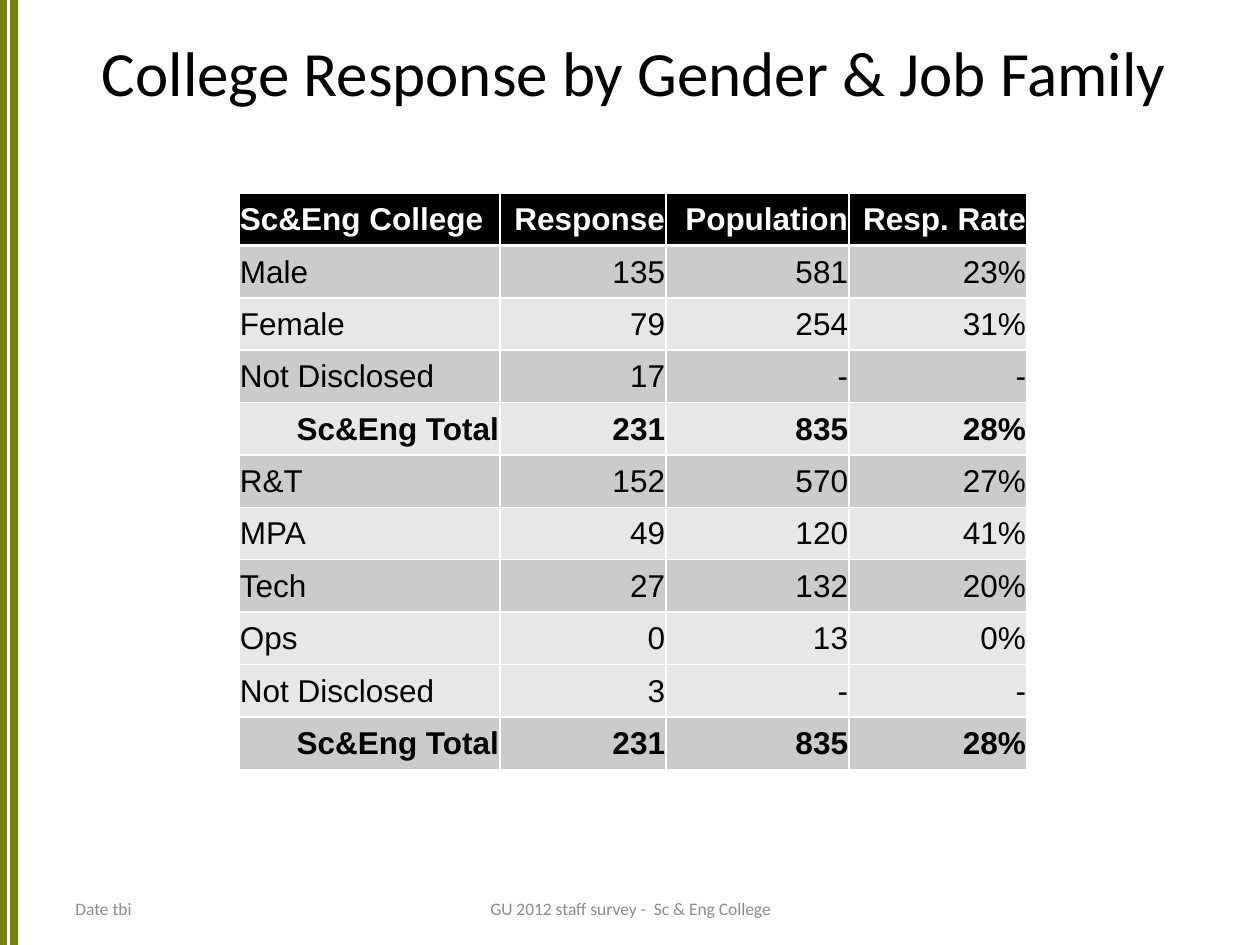
"""Build the college response slide with its table by gender and job family."""
from lxml.etree import SubElement
from pptx import Presentation
from pptx.dml.color import RGBColor
from pptx.enum.shapes import MSO_SHAPE as Shape
from pptx.enum.text import MSO_ANCHOR as Anchor, PP_ALIGN as Align
from pptx.oxml.ns import qn
from pptx.util import Emu, Pt

BLACK, WHITE, GREY, OLIVE = "000000", "FFFFFF", "8C8C8C", "778109"
DARK, LIGHT = "CBCBCB", "E7E7E7"
SLIDE_SIZE = (1260, 945)
BARS = [(10, 8), (-1, 8)]
TEXTS = [
    ("College Response by Gender & Job Family", (63, 16, 1142, 110), 36, BLACK, Align.CENTER),
    ("Date tbi", (63, 890, 294, 37), 10, GREY, Align.LEFT),
    ("GU 2012 staff survey -  Sc & Eng College", (431, 890, 399, 37), 10, GREY, Align.CENTER),
]
TABLE_ORIGIN = (239, 193)
COLUMN_WIDTHS = [261, 166, 183, 178]
ROW_HEIGHT = 52.4
TOTAL = "Sc&Eng Total"
ROWS = [
    (BLACK, "Sc&Eng College", "Response", "Population", "Resp. Rate"),
    (DARK, "Male", "135", "581", "23%"),
    (LIGHT, "Female", "79", "254", "31%"),
    (DARK, "Not Disclosed", "17", "-", "-"),
    (LIGHT, TOTAL, "231", "835", "28%"),
    (DARK, "R&T", "152", "570", "27%"),
    (LIGHT, "MPA", "49", "120", "41%"),
    (DARK, "Tech", "27", "132", "20%"),
    (LIGHT, "Ops", "0", "13", "0%"),
    (LIGHT, "Not Disclosed", "3", "-", "-"),
    (DARK, TOTAL, "231", "835", "28%"),
]


def px(value):
    return Emu(round(value * 914400 / 126))


def color(value):
    return RGBColor.from_string(value)


def write(frame, text, font="Calibri", size=10, fill=BLACK, bold=False, align=Align.LEFT):
    paragraph = frame.paragraphs[0]
    paragraph.alignment = align
    run = paragraph.add_run()
    run.text = text
    run.font.name, run.font.size, run.font.bold = font, Pt(size), bold
    run.font.color.rgb = color(fill)


def add_border(cell, side, width):
    properties = cell._tc.get_or_add_tcPr()
    line = SubElement(properties, qn(f"a:ln{side}"), w=str(Pt(width)))
    fill = SubElement(line, qn("a:solidFill"))
    SubElement(fill, qn("a:srgbClr"), val=WHITE)


def add_bars(slide):
    for left, width in BARS:
        bar = slide.shapes.add_shape(Shape.RECTANGLE, px(left), 0, px(width), px(SLIDE_SIZE[1]))
        bar.shadow.inherit = False
        bar.fill.solid()
        bar.fill.fore_color.rgb = color(OLIVE)
        bar.line.fill.background()


def add_texts(slide):
    for text, box, size, fill, align in TEXTS:
        frame = slide.shapes.add_textbox(*map(px, box)).text_frame
        frame.word_wrap = True
        frame.vertical_anchor = Anchor.MIDDLE
        write(frame, text, size=size, fill=fill, align=align)


def format_cell(cell, text, row, column):
    shade, label = ROWS[row][:2]
    header, total = row == 0, label == TOTAL
    for side in "LRTB":
        thick = (row, side) in [(0, "B"), (1, "T")]
        add_border(cell, side, 1.5 if thick else 1)
    cell.fill.solid()
    cell.fill.fore_color.rgb = color(shade)
    cell.vertical_anchor = Anchor.MIDDLE
    cell.margin_left = cell.margin_right = cell.margin_top = px(1)
    cell.margin_bottom = 0
    write(cell.text_frame, text, font="Arial", size=18, bold=header or total,
          fill=WHITE if header else BLACK,
          align=Align.RIGHT if column or total else Align.LEFT)


def add_response_table(slide):
    size = (sum(COLUMN_WIDTHS), ROW_HEIGHT * len(ROWS))
    table = slide.shapes.add_table(len(ROWS), len(COLUMN_WIDTHS),
                                   *map(px, TABLE_ORIGIN + size)).table
    for column, width in zip(table.columns, COLUMN_WIDTHS):
        column.width = px(width)
    for row, (_, *values) in enumerate(ROWS):
        table.rows[row].height = px(ROW_HEIGHT)
        for column, text in enumerate(values):
            format_cell(table.cell(row, column), text, row, column)


def main():
    presentation = Presentation()
    presentation.slide_width, presentation.slide_height = map(px, SLIDE_SIZE)
    slide = presentation.slides.add_slide(presentation.slide_layouts[6])
    add_bars(slide)
    add_texts(slide)
    add_response_table(slide)
    presentation.save("out.pptx")


if __name__ == "__main__":
    main()
